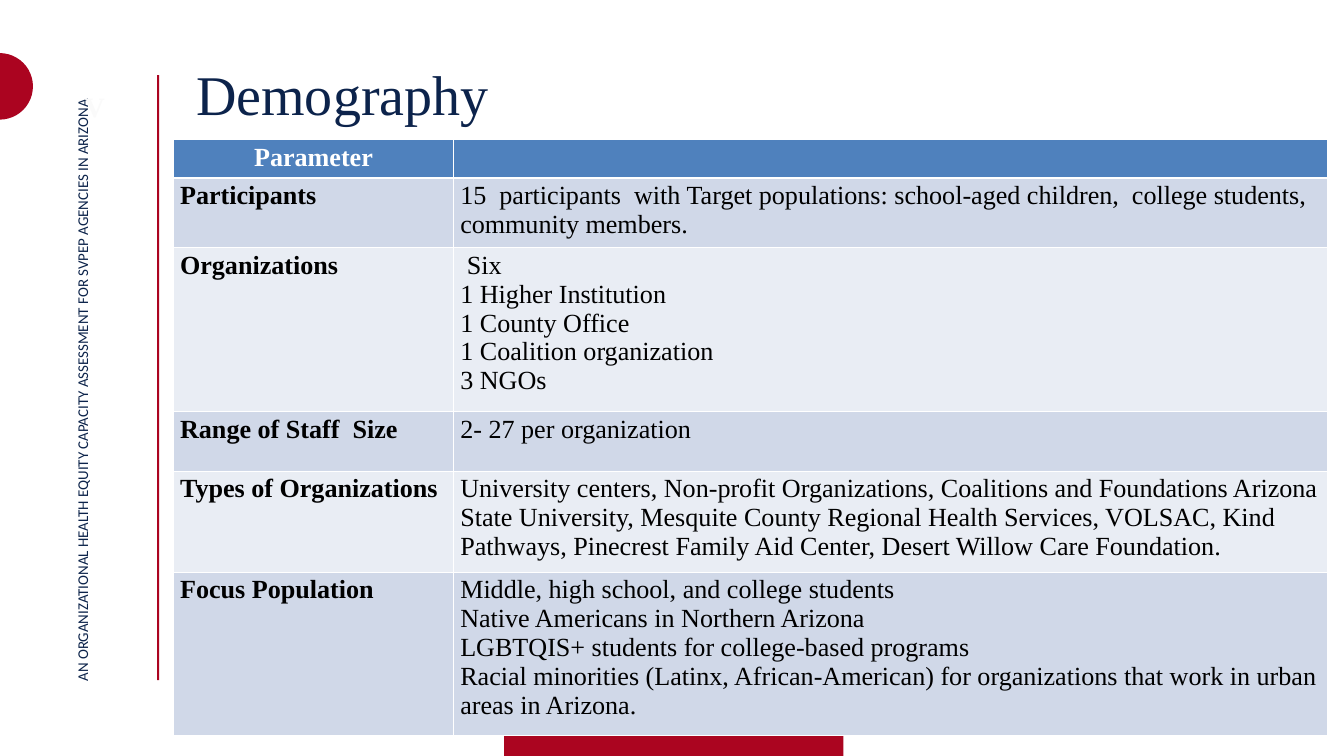
import pptx
import pptx.dml.color
import pptx.enum.shapes
import pptx.enum.text
import pptx.oxml
import pptx.oxml.ns
import pptx.util
from pptx.util import Inches

SERIF = "Times New Roman"
RED, NAVY, WHITE, BLACK = "AB0420", "0C234B", "FFFFFF", "000000"
HEADER_FILL, BAND_FILLS = "4F81BD", ("D0D8E8", "E9EDF4")

COLUMN_WIDTHS = (4.17, 13)
ROW_HEIGHTS = (0.57, 1.03, 2.44, 0.89, 1.5, 2.43)
ROWS = [
    ("Parameter", []),
    ("Participants", [
        "15  participants  with Target populations: school-aged children,  "
        "college students, community members. "]),
    ("Organizations", [
        " Six",
        "1 Higher Institution",
        "1 County Office",
        "1 Coalition organization",
        "3 NGOs"]),
    ("Range of Staff  Size", ["2- 27 per organization"]),
    ("Types of Organizations", [
        "University centers, Non-profit Organizations, Coalitions and Foundations "
        "Arizona State University, Mesquite County Regional Health Services, VOLSAC, "
        "Kind Pathways, Pinecrest Family Aid Center, Desert Willow Care Foundation."]),
    ("Focus Population", [
        "Middle, high school, and college students",
        "Native Americans in Northern Arizona",
        "LGBTQIS+ students for college-based programs",
        "Racial minorities (Latinx, African-American) for organizations that work "
        "in urban areas in Arizona."]),
]


def color(value):
    return pptx.dml.color.RGBColor.from_string(value)


def add_block(slide, kind, left, top, width, height, fill):
    shape = slide.shapes.add_shape(
        kind, Inches(left), Inches(top), Inches(width), Inches(height))
    shape.shadow.inherit = False
    shape.fill.solid()
    shape.fill.fore_color.rgb = color(fill)
    shape.line.fill.background()


def add_run(paragraph, text, size, value, font=SERIF, bold=False):
    run = paragraph.add_run()
    run.text = text
    run.font.name = font
    run.font.size = pptx.util.Pt(size)
    run.font.bold = bold
    run.font.color.rgb = color(value)
    return run


def add_text(slide, left, top, width, height, inset_top, wrap=True):
    box = slide.shapes.add_textbox(
        Inches(left), Inches(top), Inches(width), Inches(height))
    frame = box.text_frame
    frame.word_wrap = wrap
    frame.margin_left = frame.margin_right = frame.margin_bottom = 0
    frame.margin_top = Inches(inset_top)
    return frame


def set_borders(cell, bottom_width):
    properties = cell._tc.get_or_add_tcPr()
    sides = (("lnL", 1), ("lnR", 1), ("lnT", 1), ("lnB", bottom_width))
    for position, (side, width) in enumerate(sides):
        properties.insert(position, pptx.oxml.parse_xml(
            f'<a:{side} {pptx.oxml.ns.nsdecls("a")} w="{pptx.util.Pt(width)}">'
            f'<a:solidFill><a:srgbClr val="{WHITE}"/></a:solidFill></a:{side}>'))


def fill_cell(cell, lines, fill, value, bold, header):
    cell.fill.solid()
    cell.fill.fore_color.rgb = color(fill)
    set_borders(cell, 3 if header else 1)
    frame = cell.text_frame
    for index, line in enumerate(lines):
        paragraph = frame.add_paragraph() if index else frame.paragraphs[0]
        if header:
            paragraph.alignment = pptx.enum.text.PP_ALIGN.CENTER
        add_run(paragraph, line, 28, value, bold=bold)


def add_demography_table(slide):
    table = slide.shapes.add_table(
        len(ROWS), len(COLUMN_WIDTHS), Inches(2.58), Inches(2.08),
        Inches(sum(COLUMN_WIDTHS)), Inches(sum(ROW_HEIGHTS))).table
    for column, width in zip(table.columns, COLUMN_WIDTHS):
        column.width = Inches(width)
    for index, (label, details) in enumerate(ROWS):
        table.rows[index].height = Inches(ROW_HEIGHTS[index])
        header = index == 0
        fill = HEADER_FILL if header else BAND_FILLS[(index - 1) % 2]
        value = WHITE if header else BLACK
        fill_cell(table.cell(index, 0), [label], fill, value, True, header)
        fill_cell(table.cell(index, 1), details, fill, value, False, header)


def main():
    presentation = pptx.Presentation()
    presentation.slide_width = Inches(20)
    presentation.slide_height = Inches(11.25)
    slide = presentation.slides.add_slide(presentation.slide_layouts[6])
    shapes = pptx.enum.shapes.MSO_SHAPE

    # Side rule, bottom bar and corner disc
    add_block(slide, shapes.RECTANGLE, 2.34, 1.12, 0.03, 9, RED)
    add_block(slide, shapes.RECTANGLE, 7.5, 10.76, 5.05, 0.54, "AB0520")
    add_block(slide, shapes.OVAL, -0.5, 0.79, 0.99, 0.99, RED)

    # Vertical running title
    frame = add_text(slide, 1.09, 1.12, 0.33, 9.02, 0.01)
    frame._txBody.bodyPr.set("vert", "vert270")
    add_run(frame.paragraphs[0],
            "AN ORGANIZATIONAL HEALTH EQUITY CAPACITY ASSESSMENT "
            "FOR SVPEP AGENCIES IN ARIZONA", 16, "0C234A", "Calibri")

    # Title
    frame = add_text(slide, 2.92, 0.61, 14.89, 1.42, 0.17)
    frame.paragraphs[0].line_spacing = pptx.util.Pt(80)
    add_run(frame.paragraphs[0], "Demography", 60, NAVY)

    # Faint letter beside the running title
    frame = add_text(slide, 1.26, 1.32, 0.3, 0.53, 0.01)
    letter = add_run(frame.paragraphs[0], "V", 30, "FAFAFA", bold=True)
    letter.font._element.set("spc", "-190")

    add_demography_table(slide)
    presentation.save("out.pptx")


if __name__ == "__main__":
    main()
